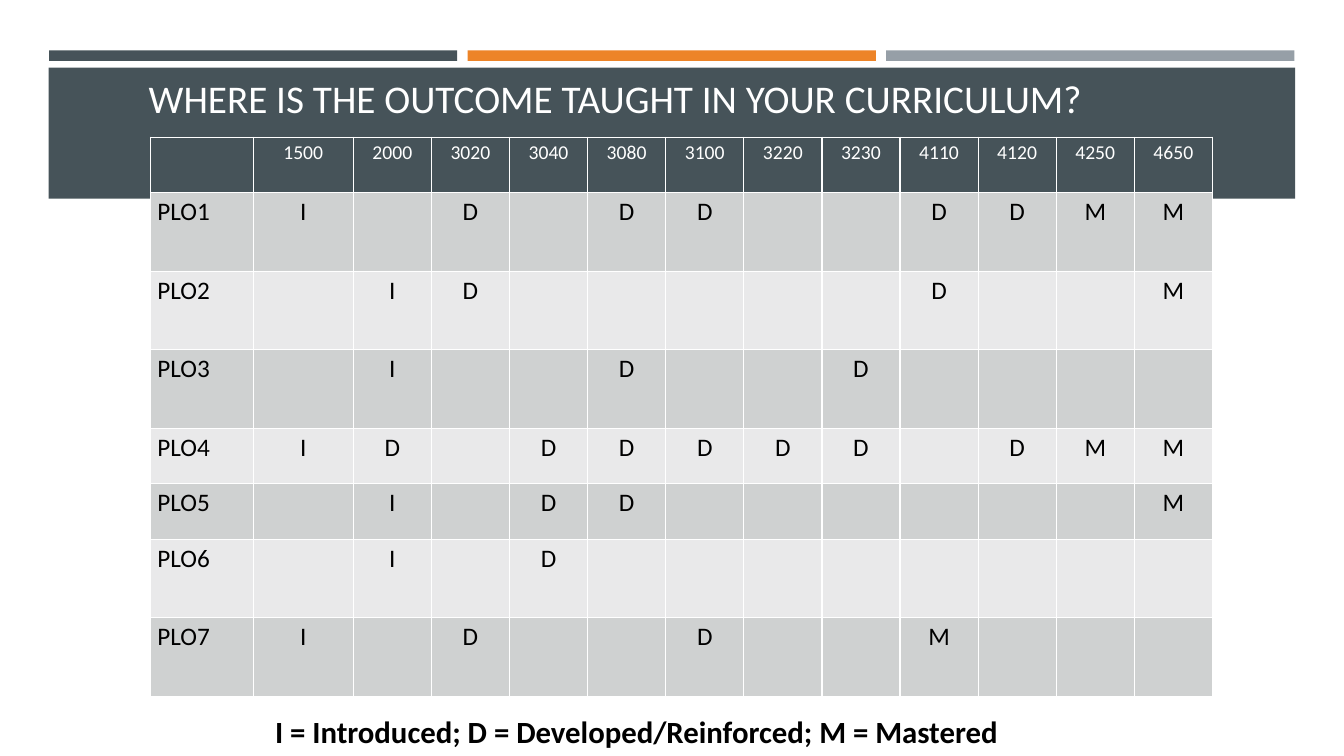
from lxml import etree
from pptx import Presentation
from pptx.dml.color import RGBColor
from pptx.enum import shapes, text
from pptx.oxml import ns
from pptx.util import Pt

SLATE = RGBColor(0x46, 0x53, 0x59)
ORANGE = RGBColor(0xED, 0x84, 0x28)
GREY = RGBColor(0x96, 0x9F, 0xA7)
DARK = RGBColor(0xCF, 0xD1, 0xD1)
LIGHT = RGBColor(0xE9, 0xE9, 0xEA)
WHITE = RGBColor(0xFF, 0xFF, 0xFF)
BLACK = RGBColor(0, 0, 0)

COURSES = "1500 2000 3020 3040 3080 3100 3220 3230 4110 4120 4250 4650".split()
# One letter per course; a dot is a blank cell
LEVELS = [
    "I.D.DD..DDMM",
    ".ID.....D..M",
    ".I..D..D....",
    "ID.DDDDD.DMM",
    ".I.DD......M",
    ".I.D........",
    "I.D..D..M...",
]
LOW, HIGH = 39.6, 56.15
HEIGHTS = [LOW, HIGH, HIGH, HIGH, LOW, LOW, HIGH, HIGH]
WIDTHS = [73.5, 71.5] + [55.8] * 11


def style(para, size, color, bold=False):
    for run in para.runs:
        run.font.name = "Calibri"
        run.font.size = Pt(size)
        run.font.bold = bold
        run.font.color.rgb = color


def border(cell):
    """Draw a thin white line on all four sides of a cell."""
    props = cell._tc.get_or_add_tcPr()
    for side in ("a:lnL", "a:lnR", "a:lnT", "a:lnB"):
        line = etree.SubElement(props, ns.qn(side), w=str(Pt(1)))
        fill = etree.SubElement(line, ns.qn("a:solidFill"))
        etree.SubElement(fill, ns.qn("a:srgbClr"), val=str(WHITE))


prs = Presentation()
prs.slide_width, prs.slide_height = Pt(960), Pt(540)
slide = prs.slides.add_slide(prs.slide_layouts[5])

# Accent bars and title band
bars = [(35 + 299 * i, 36, 291.6, 7.5, color)
        for i, color in enumerate((SLATE, ORANGE, GREY))]
for left, top, width, height, color in bars + [(34.8, 48.4, 890.4, 93.6, SLATE)]:
    bar = slide.shapes.add_shape(shapes.MSO_SHAPE.RECTANGLE,
                                 Pt(left), Pt(top), Pt(width), Pt(height))
    bar.shadow.inherit = False
    bar.fill.solid()
    bar.fill.fore_color.rgb = color
    bar.line.fill.background()

# Curriculum map
rows = [[""] + COURSES]
for n, marks in enumerate(LEVELS, 1):
    rows.append([f"PLO{n}"] + list(marks.replace(".", " ")))

frame = slide.shapes.add_table(len(rows), len(WIDTHS), Pt(107.4), Pt(98),
                               Pt(sum(WIDTHS)), Pt(sum(HEIGHTS)))
table = frame.table
table.first_row = table.horz_banding = False
for col, width in zip(table.columns, WIDTHS):
    col.width = Pt(width)
for r, (row, height) in enumerate(zip(rows, HEIGHTS)):
    table.rows[r].height = Pt(height)
    shade = SLATE if r == 0 else DARK if r % 2 else LIGHT
    for c, word in enumerate(row):
        cell = table.cell(r, c)
        border(cell)
        cell.fill.solid()
        cell.fill.fore_color.rgb = shade
        cell.margin_left = cell.margin_right = Pt(5)
        cell.margin_top = cell.margin_bottom = Pt(2.9)
        if word.strip():
            para = cell.text_frame.paragraphs[0]
            para.text = word
            para.alignment = text.PP_ALIGN.CENTER if c else text.PP_ALIGN.LEFT
            style(para, 18 if r else 14, BLACK if r else WHITE)

# Title, brought in front of the band
title = slide.shapes.title
title.element.getparent().append(title.element)
title.left, title.top, title.width, title.height = Pt(99), Pt(0), Pt(775), Pt(90)
title.text_frame.text = "WHERE IS THE OUTCOME TAUGHT IN YOUR CURRICULUM?"
title.text_frame.vertical_anchor = text.MSO_ANCHOR.BOTTOM
title.text_frame.paragraphs[0].alignment = text.PP_ALIGN.LEFT
style(title.text_frame.paragraphs[0], 28, WHITE)

# Legend
legend = slide.shapes.add_textbox(Pt(189.4), Pt(505.4), Pt(594.7), Pt(33.8))
legend.text_frame.word_wrap = True
legend.text_frame.text = "I = Introduced; D = Developed/Reinforced; M = Mastered"
style(legend.text_frame.paragraphs[0], 22, BLACK, bold=True)

prs.save("out.pptx")
